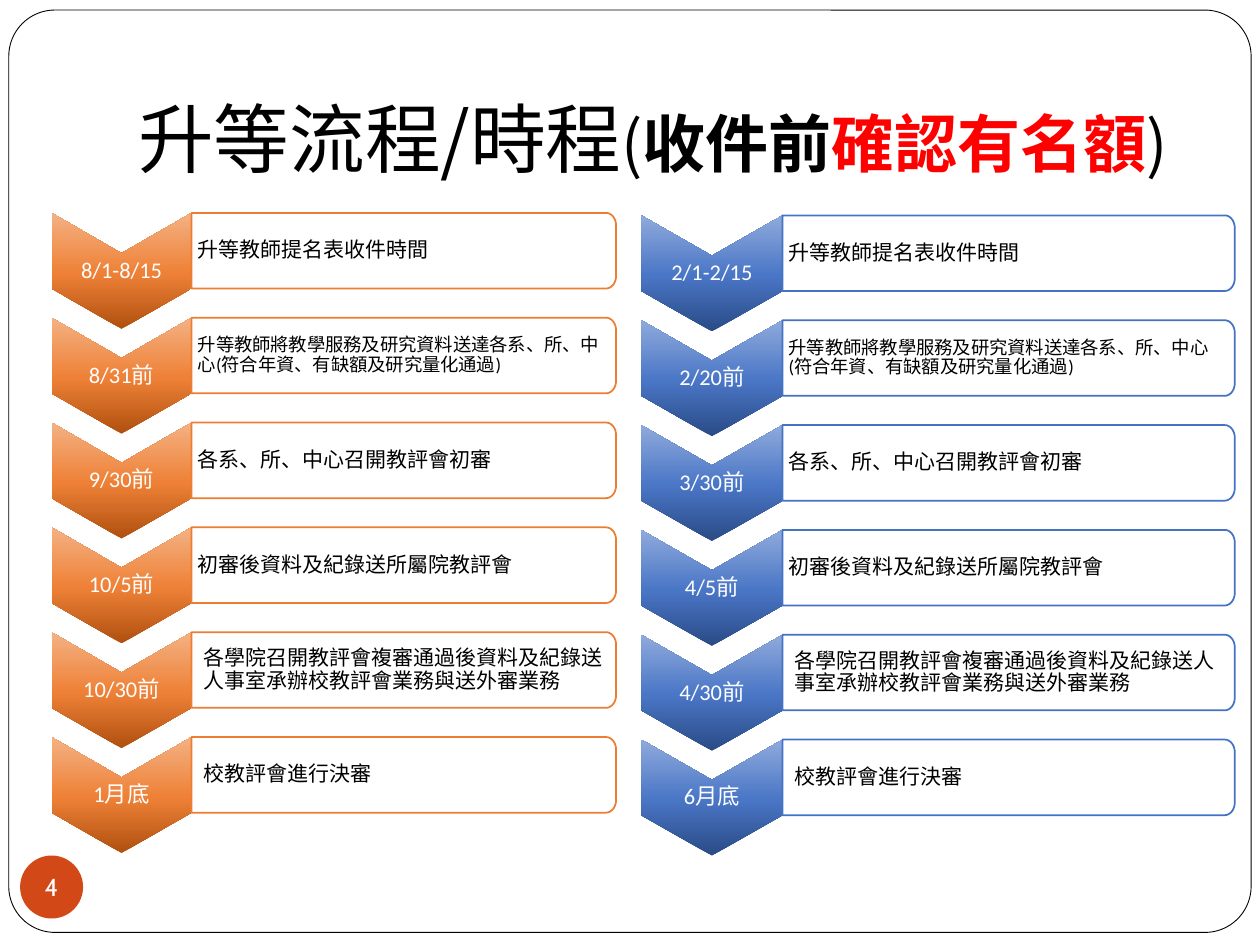
from copy import deepcopy
from math import cos, radians, sin

from pptx import Presentation
from pptx.dml.color import RGBColor
from pptx.enum.shapes import MSO_SHAPE
from pptx.enum.text import MSO_ANCHOR, PP_ALIGN
from pptx.util import Inches, Pt

HUES = {"black": "000000", "white": "FFFFFF", "red": "FF0000", "badge": "D34817"}
COLS = [
    {
        "left": 0.41, "top": 1.69, "edge": 1.52, "right": 4.89, "line": "ED7D31",
        "grad": ["B0500F", "EE8137", "F4B183"],
        "dates": ["8/1-8/15", "8/31前", "9/30前", "10/5前", "10/30前", "1月底"],
    },
    {
        "left": 5.09, "top": 1.71, "edge": 6.21, "right": 9.8, "line": "4472C4",
        "grad": ["2A4B86", "4A76C6", "8FAADC"],
        "dates": ["2/1-2/15", "2/20前", "3/30前", "4/5前", "4/30前", "6月底"],
    },
]
STEPS = [
    ("升等教師提名表收件時間", 12, 0.05),
    ("升等教師將教學服務及研究資料送達各系、所、中心(符合年資、有缺額及研究量化通過)", 10.5, 0.05),
    ("各系、所、中心召開教評會初審", 12, 0.05),
    ("初審後資料及紀錄送所屬院教評會", 12, 0.05),
    ("各學院召開教評會複審通過後資料及紀錄送人事室承辦校教評會業務與送外審業務", 12, 0.1),
    ("校教評會進行決審", 12, 0.1),
]
PITCH = (5.85 - 1.69) / 5
BOX, TIP, DEEP = 0.6, 0.92, 0.32
RX, RY = 0.08, 0.1


def write(shape, runs, pads, align=PP_ALIGN.LEFT, anchor=MSO_ANCHOR.MIDDLE, space=0.9, wrap=True):
    frame = shape.text_frame
    left, top, right, bottom = map(Inches, pads)
    look = {
        "word_wrap": wrap, "vertical_anchor": anchor, "margin_left": left,
        "margin_top": top, "margin_right": right, "margin_bottom": bottom,
    }
    for key, val in look.items():
        setattr(frame, key, val)
    para = frame.paragraphs[0]
    for key, val in {"alignment": align, "line_spacing": space}.items():
        setattr(para, key, val)
    for text, size, name, hue, bold in runs:
        run = para.add_run()
        run.text = text
        for key, val in {"size": Pt(size), "name": name, "bold": bold}.items():
            setattr(run.font, key, val)
        run.font.color.rgb = RGBColor.from_string(HUES[hue])


def trace(shapes, points):
    spots = [(Inches(x), Inches(y)) for x, y in points]
    pen = shapes.build_freeform(*spots[0])
    pen.add_line_segments(spots[1:], close=True)
    shape = pen.convert_to_shape()
    shape.shadow.inherit = False
    return shape


deck = Presentation()
for key, val in {"slide_width": Inches(10), "slide_height": Inches(7.5)}.items():
    setattr(deck, key, val)
shapes = deck.slides.add_slide(deck.slide_layouts[6]).shapes

frame = shapes.add_shape(
    MSO_SHAPE.ROUNDED_RECTANGLE, Inches(0.07), Inches(0.08), Inches(9.86), Inches(7.32)
)
frame.adjustments[0] = 0.05
frame.shadow.inherit = False
frame.fill.solid()
frame.fill.fore_color.rgb = RGBColor.from_string(HUES["white"])
frame.line.color.rgb = RGBColor.from_string(HUES["black"])
frame.line.width = Pt(0.5)

title = shapes.add_textbox(Inches(1), Inches(0.3), Inches(8.5), Inches(1.25))
sans = "Noto Sans CJK SC"
write(title, [
    ("升等流程/時程", 43.2, sans, "black", False),
    ("(", 36, sans, "black", False),
    ("收件前", 36, sans, "black", True),
    ("確認有名額", 36, sans, "red", True),
    (")", 36, sans, "black", False),
], (0.1, 0.05, 0.1, 0.1), anchor=MSO_ANCHOR.BOTTOM, space=0.85)

badge = shapes.add_shape(MSO_SHAPE.OVAL, Inches(0.16), Inches(6.79), Inches(0.5), Inches(0.5))
badge.shadow.inherit = False
badge.fill.solid()
badge.fill.fore_color.rgb = RGBColor.from_string(HUES["badge"])
badge.line.fill.background()
write(badge, [("4", 14, "Cabin", "white", False)], (0, 0, 0, 0),
      PP_ALIGN.CENTER, space=1.0, wrap=False)

for col in COLS:
    left, edge, right = col["left"], col["edge"], col["right"]
    mid = (left + edge) / 2
    for row, (date, (text, size, pad)) in enumerate(zip(col["dates"], STEPS)):
        top = col["top"] + row * PITCH
        base = top + BOX

        arrow = trace(shapes, [
            (edge, top), (edge, base), (mid, top + TIP),
            (left, base), (left, top), (mid, top + DEEP),
        ])
        arrow.line.fill.background()
        arrow.fill.gradient()
        arrow.fill.gradient_angle = 90
        stops = arrow._element.xpath(".//a:gsLst")[0]
        stops.append(deepcopy(stops[-1]))
        for stop, spot, hue in zip(arrow.fill.gradient_stops, (0, 0.48, 1), col["grad"]):
            stop.position = spot
            stop.color.rgb = RGBColor.from_string(hue)
        write(arrow, [(date, 12.8, "Calibri", "white", False)],
              (0.01, 0.29, 0.01, 0.29), PP_ALIGN.CENTER)

        turns = [radians(deg) for deg in range(0, 91, 10)]
        upper = [(right - RX + RX * sin(t), top + RY - RY * cos(t)) for t in turns]
        lower = [(right - RX + RX * cos(t), base - RY + RY * sin(t)) for t in turns]
        card = trace(shapes, [(edge, top), *upper, *lower, (edge, base)])
        card.fill.solid()
        card.fill.fore_color.rgb = RGBColor.from_string(HUES["white"])
        card.line.color.rgb = RGBColor.from_string(col["line"])
        card.line.width = Pt(1)
        write(card, [(text, size, "Calibri", "black", False)], (pad, 0.03, 0.03, 0.03))

deck.save("out.pptx")
